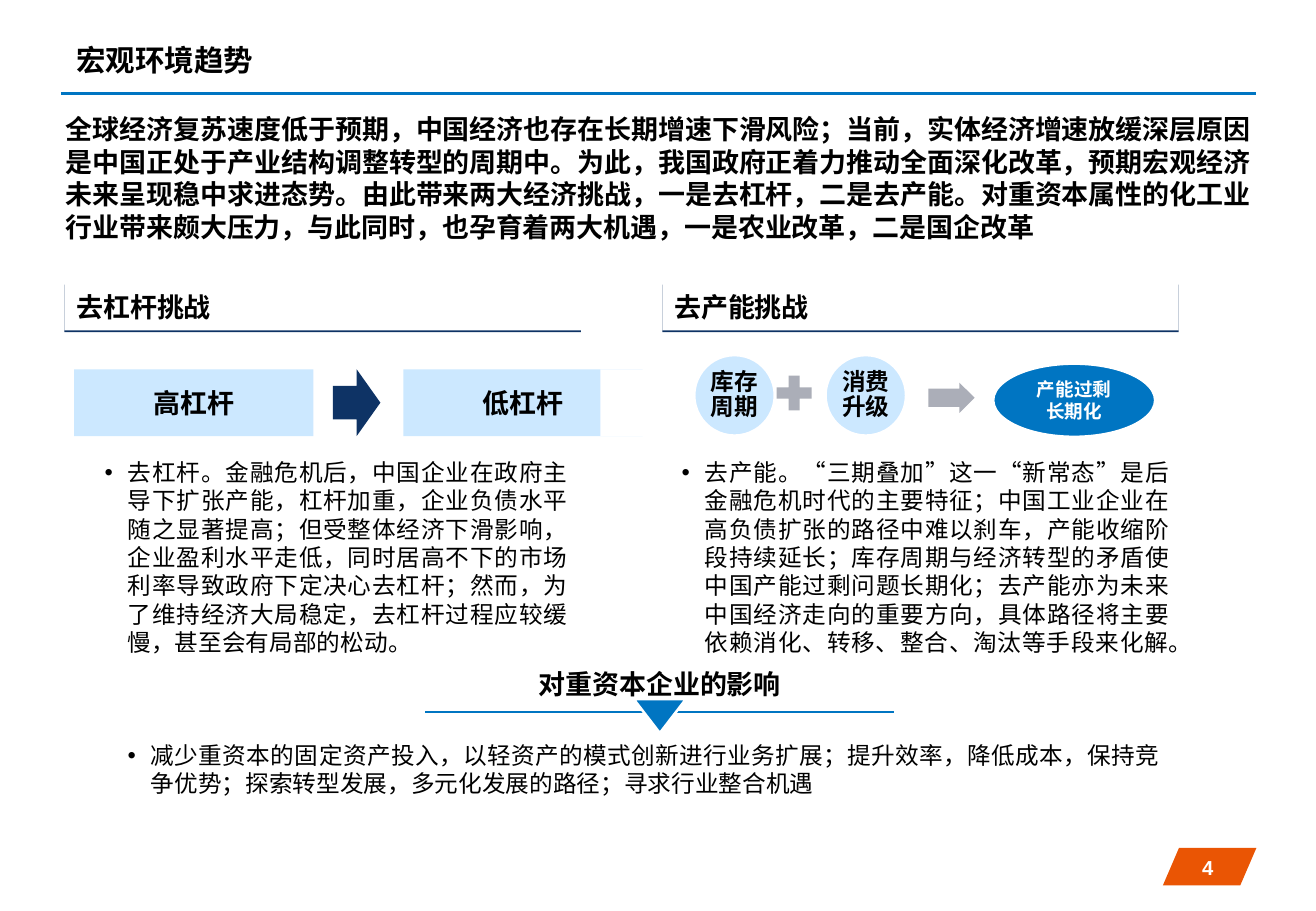
from pptx import Presentation
from pptx.dml.color import RGBColor
from pptx.enum.shapes import MSO_CONNECTOR, MSO_SHAPE as Shape
from pptx.enum.text import MSO_ANCHOR as Anchor, PP_ALIGN as Align
from pptx.oxml import parse_xml
from pptx.oxml.ns import nsdecls
from pptx.util import Inches, Pt

COLORS = {
    "black": "000000", "white": "FFFFFF", "blue": "0075C2", "navy": "0E3365",
    "pale": "CCE8FF", "gray": "ABAEB8", "orange": "EA5504",
}
SMALL_MARGINS = (0.04, 0.04)
CIRCLE_MARGINS = (0.02, 0.02)


class SlideBuilder:
    """Holds the style and the current slide."""

    font_name = "Arial"

    def __init__(self, slide):
        self.slide = slide
        self.shapes = slide.shapes

    def color(self, name):
        return RGBColor.from_string(COLORS[name])

    def set_text(self, shape, text, size=16, bold=True, color="black", align=Align.CENTER,
                 anchor=Anchor.MIDDLE, margins=(0.1, 0.05), spacing=1.0, bullet=False,
                 wrap=True):
        frame = shape.text_frame
        frame.word_wrap = wrap
        frame.vertical_anchor = anchor
        frame.margin_left = frame.margin_right = Inches(margins[0])
        frame.margin_top = frame.margin_bottom = Inches(margins[1])
        paragraph = frame.paragraphs[0]
        properties = paragraph._p.get_or_add_pPr()
        indent = Inches(0.19) if bullet else 0
        properties.set("marL", str(indent))
        properties.set("indent", str(-indent))
        mark = '<a:buChar {} char="•"/>' if bullet else "<a:buNone {}/>"
        properties.append(parse_xml(mark.format(nsdecls("a"))))
        paragraph.alignment = align
        paragraph.line_spacing = spacing
        paragraph.space_before = Pt(0)
        for index, line in enumerate(text.split("\n")):
            if index:
                paragraph.add_line_break()
            run = paragraph.add_run()
            run.text = line
            run.font.name = self.font_name
            run.font.size = Pt(size)
            run.font.bold = bold
            run.font.color.rgb = self.color(color)

    def placeholder(self, index, box, text, **style):
        shape = self.slide.placeholders[index]
        shape.left, shape.top, shape.width, shape.height = map(Inches, box)
        self.set_text(shape, text, **style)

    def bullet_list(self, index, box, text):
        self.placeholder(index, box, text, size=14, bold=False, align=Align.JUSTIFY,
                         anchor=Anchor.TOP, margins=SMALL_MARGINS, bullet=True)

    def text_box(self, box, text, **style):
        self.set_text(self.shapes.add_textbox(*map(Inches, box)), text, **style)

    def block(self, kind, box, fill, text=None, outline=None, width=2, **style):
        shape = self.shapes.add_shape(kind, *map(Inches, box))
        shape.shadow.inherit = False
        shape.fill.solid()
        shape.fill.fore_color.rgb = self.color(fill)
        if outline:
            shape.line.color.rgb = self.color(outline)
            shape.line.width = Pt(width)
        else:
            shape.line.fill.background()
        if text:
            self.set_text(shape, text, **style)
        return shape

    def section_header(self, box, text):
        shape = self.block(Shape.RECTANGLE, box, "white", text, align=Align.LEFT)
        effects = shape._element.spPr.find("{*}effectLst")
        effects.append(parse_xml(
            f'<a:outerShdw {nsdecls("a")} blurRad="0" dist="{Pt(1)}" dir="5400000" '
            f'algn="t" rotWithShape="0"><a:srgbClr val="{COLORS["navy"]}"/></a:outerShdw>'))

    def rule(self, left, right, top, width):
        line = self.shapes.add_connector(
            MSO_CONNECTOR.STRAIGHT, Inches(left), Inches(top), Inches(right), Inches(top))
        line.line.color.rgb = self.color("blue")
        line.line.width = Pt(width)
        line._element.spPr.append(parse_xml(f'<a:effectLst {nsdecls("a")}/>'))


def main():
    presentation = Presentation()
    presentation.slide_width = Inches(10.83)
    presentation.slide_height = Inches(7.5)
    # The comparison layout offers a title and four text areas
    builder = SlideBuilder(presentation.slides.add_slide(presentation.slide_layouts[4]))

    # Page frame
    builder.block(Shape.PARALLELOGRAM, (9.57, 6.98, 0.77, 0.31), "orange").adjustments[0] = 0.43
    builder.rule(0.5, 10.34, 0.77, 2.25)
    builder.text_box((9.58, 7, 0.72, 0.28), "4", size=12, color="white",
                     anchor=Anchor.TOP, margins=(0.08, 0.04))
    builder.text_box((0.53, 0.3, 1.67, 0.4), "宏观环境趋势", size=17.5,
                     align=Align.LEFT, anchor=Anchor.TOP, wrap=False)

    # Key message
    builder.placeholder(
        0, (0.5, 0.89, 9.84, 1.16),
        "全球经济复苏速度低于预期，中国经济也存在长期增速下滑风险；当前，实体经济增速放缓深层原因"
        "是中国正处于产业结构调整转型的周期中。为此，我国政府正着力推动全面深化改革，预期宏观经济"
        "未来呈现稳中求进态势。由此带来两大经济挑战，一是去杠杆，二是去产能。对重资本属性的化工业"
        "行业带来颇大压力，与此同时，也孕育着两大机遇，一是农业改革，二是国企改革",
        align=Align.JUSTIFY, anchor=Anchor.TOP, margins=SMALL_MARGINS)

    # Section headers
    for left, heading in ((0.53, "去杠杆挑战"), (5.45, "去产能挑战")):
        builder.section_header((left, 2.33, 4.25, 0.39), heading)

    # Leverage: from high to low
    for left, level in ((0.61, "高杠杆"), (3.32, "低杠杆")):
        builder.block(Shape.RECTANGLE, (left, 3.04, 1.97, 0.55), "pale", level,
                      margins=SMALL_MARGINS)
    builder.block(Shape.RIGHT_ARROW, (2.74, 3.04, 0.39, 0.55), "navy")
    builder.block(Shape.RECTANGLE, (4.94, 3.04, 1.47, 0.55), "white")

    # Capacity: two causes and their result
    for left, cause in ((5.71, "库存\n周期"), (6.79, "消费\n升级")):
        builder.block(Shape.OVAL, (left, 2.92, 0.67, 0.67), "pale", cause, outline="white",
                      size=14, margins=CIRCLE_MARGINS, spacing=0.9)
    builder.block(Shape.MATH_PLUS, (6.34, 3.04, 0.39, 0.39), "gray")
    builder.block(Shape.RIGHT_ARROW, (7.64, 3.15, 0.38, 0.25), "gray").adjustments[0] = 0.6
    builder.block(Shape.OVAL, (8.17, 2.99, 1.34, 0.61), "blue", "产能过剩\n长期化",
                  outline="white", size=11, color="white", margins=CIRCLE_MARGINS)

    # Explanations of the two challenges
    builder.bullet_list(
        2, (0.82, 3.73, 3.89, 1.73),
        "去杠杆。金融危机后，中国企业在政府主导下扩张产能，杠杆加重，企业负债水平随之显著提高；"
        "但受整体经济下滑影响，企业盈利水平走低，同时居高不下的市场利率导致政府下定决心去杠杆；"
        "然而，为了维持经济大局稳定，去杠杆过程应较缓慢，甚至会有局部的松动。")
    builder.bullet_list(
        4, (5.57, 3.73, 4.09, 1.73),
        "去产能。“三期叠加”这一“新常态”是后金融危机时代的主要特征；中国工业企业在高负债扩张的"
        "路径中难以刹车，产能收缩阶段持续延长；库存周期与经济转型的矛盾使中国产能过剩问题长期化；"
        "去产能亦为未来中国经济走向的重要方向，具体路径将主要依赖消化、转移、整合、淘汰等手段来化解。")

    # Impact on capital-heavy companies
    builder.rule(3.5, 7.36, 5.86, 1.5)
    pointer = builder.block(Shape.RIGHT_ARROW, (5.29, 5.68, 0.28, 0.43), "blue",
                            outline="white", width=1.5)
    pointer.adjustments[1] = 2.02
    pointer.rotation = 90
    builder.placeholder(1, (3.47, 5.42, 3.92, 0.41), "对重资本企业的影响")
    builder.bullet_list(
        3, (1.01, 6.06, 8.58, 0.55),
        "减少重资本的固定资产投入，以轻资产的模式创新进行业务扩展；提升效率，降低成本，保持竞争优势；"
        "探索转型发展，多元化发展的路径；寻求行业整合机遇")

    presentation.save("out.pptx")


if __name__ == "__main__":
    main()
